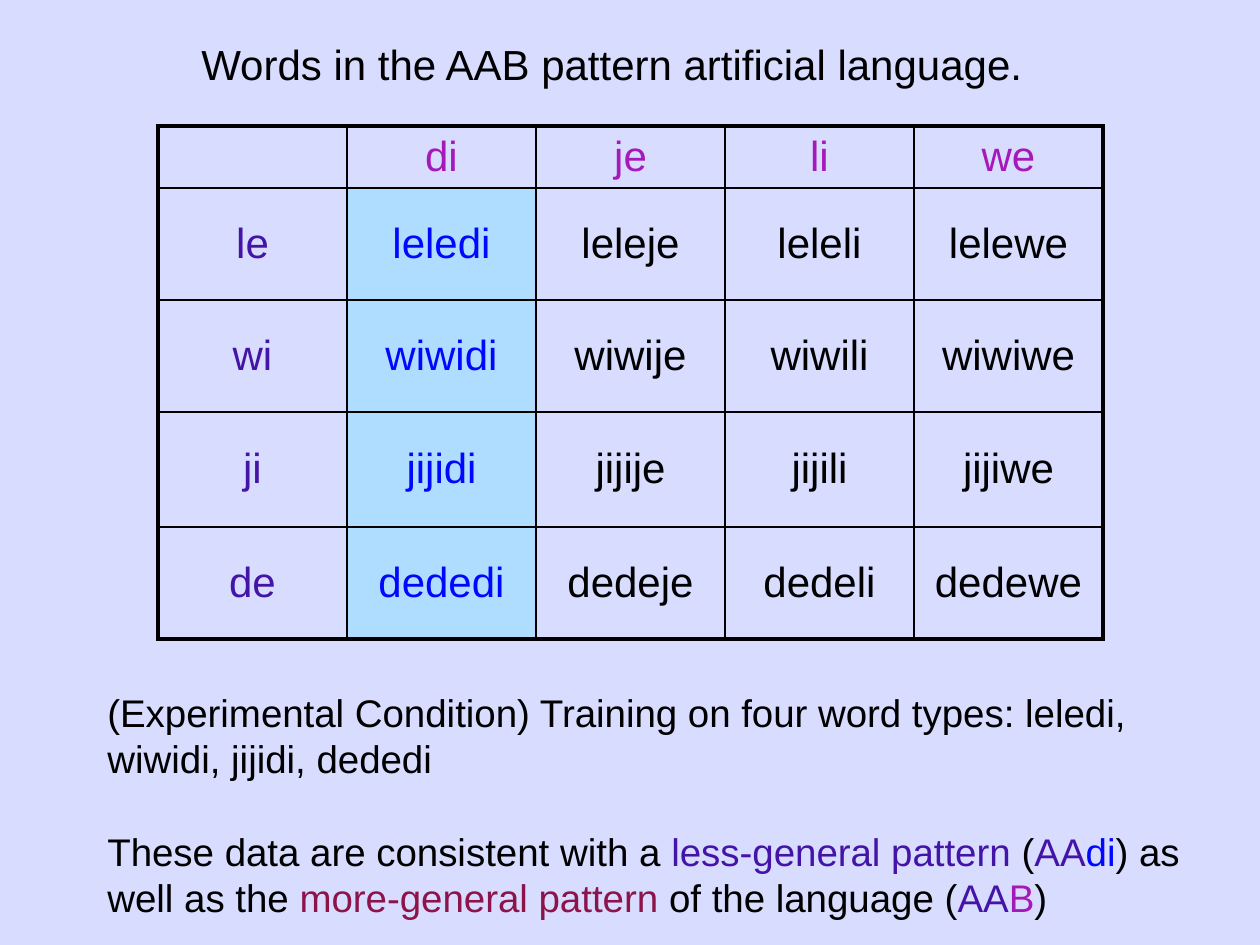
from dataclasses import dataclass

from lxml.etree import SubElement
from pptx import Presentation
from pptx.dml.color import RGBColor as Color
from pptx.enum.text import MSO_ANCHOR as Anchor, PP_ALIGN as Align
from pptx.oxml.ns import qn
from pptx.util import Emu, Pt

EMU_PER_INCH = 914400
PX_PER_INCH = 126
COLORS = {
    "page": "D8DCFF",
    "ink": "000000",
    "suffix": "A519B9",
    "stem": "4414A7",
    "trained": "0006FF",
    "general": "8C144A",
    "highlight": "AFDDFF",
}
SUFFIXES = ["di", "je", "li", "we"]
STEMS = ["le", "wi", "ji", "de"]
TRAINED_COLUMN = 1
COLUMN_WIDTH = 189
ROW_HEIGHTS = [62, 112, 112, 115, 112]


@dataclass(frozen=True)
class Span:
    text: str
    color: str = "ink"


@dataclass(frozen=True)
class TextBlock:
    left: int
    top: int
    width: int
    height: int
    size: int
    paragraphs: list[list[Span]]
    gap: float = 0


BLOCKS = [
    TextBlock(189, 32, 872, 63, 24, [
        [Span("Words in the AAB pattern artificial language.")],
    ]),
    TextBlock(95, 683, 1124, 243, 22, [
        [Span("(Experimental Condition) Training on four word types: "
              "leledi, wiwidi, jijidi, dededi")],
        [
            Span("These data are consistent with a "),
            Span("less-general pattern", "stem"),
            Span(" ("),
            Span("AA", "stem"),
            Span("di", "trained"),
            Span(") as well as the "),
            Span("more-general pattern", "general"),
            Span(" of the language ("),
            Span("AA", "stem"),
            Span("B", "suffix"),
            Span(")"),
        ],
    ], gap=26.4),
]


def px(length: int) -> Emu:
    return Emu(round(length * EMU_PER_INCH / PX_PER_INCH))


def color(name: str) -> Color:
    return Color.from_string(COLORS[name])


def add_text(para, text: str, *, size: int, ink: str = "ink") -> None:
    run = para.add_run()
    run.text = text
    run.font.name = "Arial"
    run.font.size = Pt(size)
    run.font.color.rgb = color(ink)


def add_block(page, block: TextBlock) -> None:
    box = page.shapes.add_textbox(
        px(block.left), px(block.top), px(block.width), px(block.height))
    frame = box.text_frame
    frame.word_wrap = True
    for index, spans in enumerate(block.paragraphs):
        para = frame.add_paragraph() if index else frame.paragraphs[0]
        if index:
            para.space_before = Pt(block.gap)
        for span in spans:
            add_text(para, span.text, size=block.size, ink=span.color)


def set_borders(cell, widths: dict[str, float]) -> None:
    properties = cell._tc.get_or_add_tcPr()
    for position, (side, width) in enumerate(widths.items()):
        line = SubElement(properties, qn(f"a:ln{side}"), w=str(Pt(width)))
        fill = SubElement(line, qn("a:solidFill"))
        SubElement(fill, qn("a:srgbClr"), val=COLORS["ink"])
        properties.remove(line)
        properties.insert(position, line)


def cell_span(row: int, column: int) -> Span:
    stem = STEMS[row - 1] if row else ""
    suffix = SUFFIXES[column - 1] if column else ""
    if not row:
        return Span(suffix, "suffix")
    if not column:
        return Span(stem, "stem")
    ink = "trained" if column == TRAINED_COLUMN else "ink"
    return Span(stem * 2 + suffix, ink)


def add_word_table(page) -> None:
    rows, columns = len(STEMS) + 1, len(SUFFIXES) + 1
    table = page.shapes.add_table(
        rows, columns, px(158), px(126),
        px(COLUMN_WIDTH * columns), px(sum(ROW_HEIGHTS))).table
    table.first_row = table.horz_banding = False
    for column in table.columns:
        column.width = px(COLUMN_WIDTH)
    for row, height in zip(table.rows, ROW_HEIGHTS):
        row.height = px(height)
    for row in range(rows):
        for column in range(columns):
            cell = table.cell(row, column)
            cell.vertical_anchor = Anchor.MIDDLE
            if row and column == TRAINED_COLUMN:
                cell.fill.solid()
                cell.fill.fore_color.rgb = color("highlight")
            else:
                cell.fill.background()
            outer = {"L": column == 0, "R": column == columns - 1,
                     "T": row == 0, "B": row == rows - 1}
            set_borders(cell, {side: 2.25 if edge else 1
                               for side, edge in outer.items()})
            span = cell_span(row, column)
            if span.text:
                para = cell.text_frame.paragraphs[0]
                para.alignment = Align.CENTER
                add_text(para, span.text, size=24, ink=span.color)


def main() -> None:
    deck = Presentation()
    deck.slide_width, deck.slide_height = px(1260), px(945)
    page = deck.slides.add_slide(deck.slide_layouts[6])
    page.background.fill.solid()
    page.background.fill.fore_color.rgb = color("page")
    add_word_table(page)
    for block in BLOCKS:
        add_block(page, block)
    deck.save("out.pptx")


if __name__ == "__main__":
    main()
